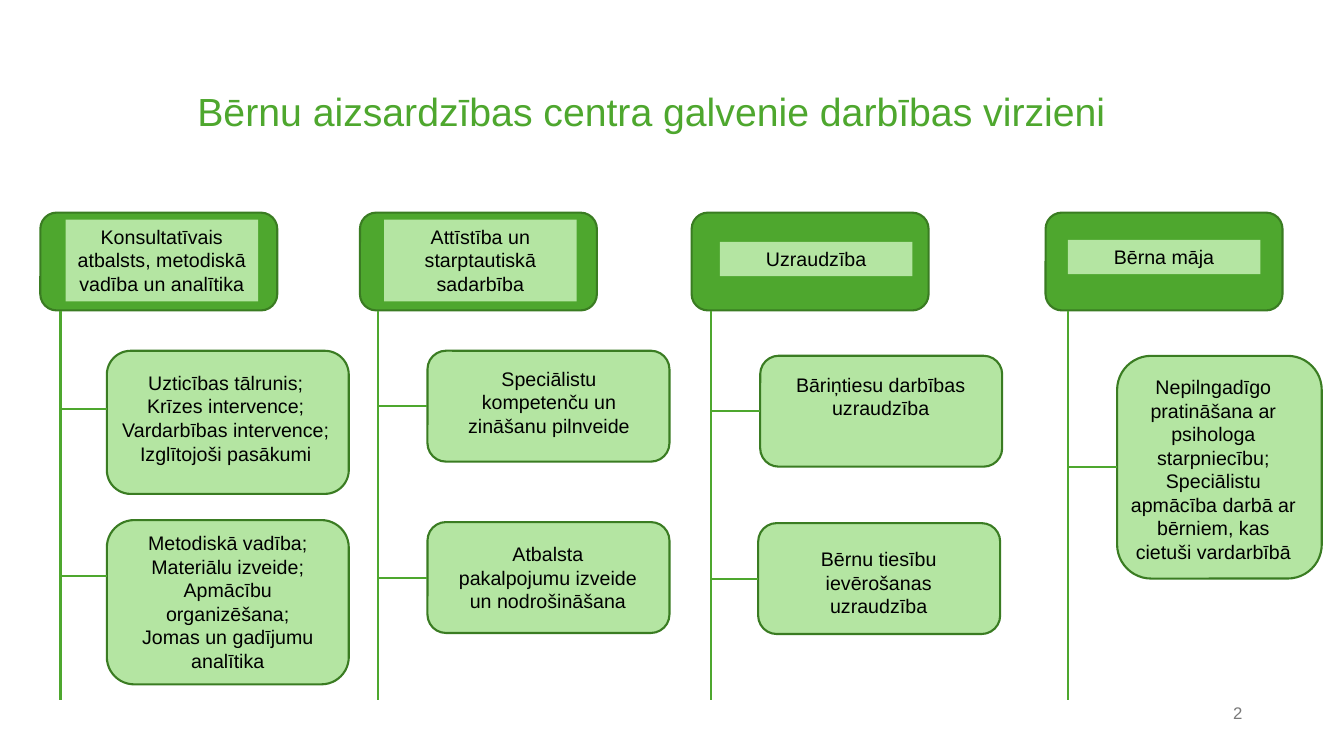
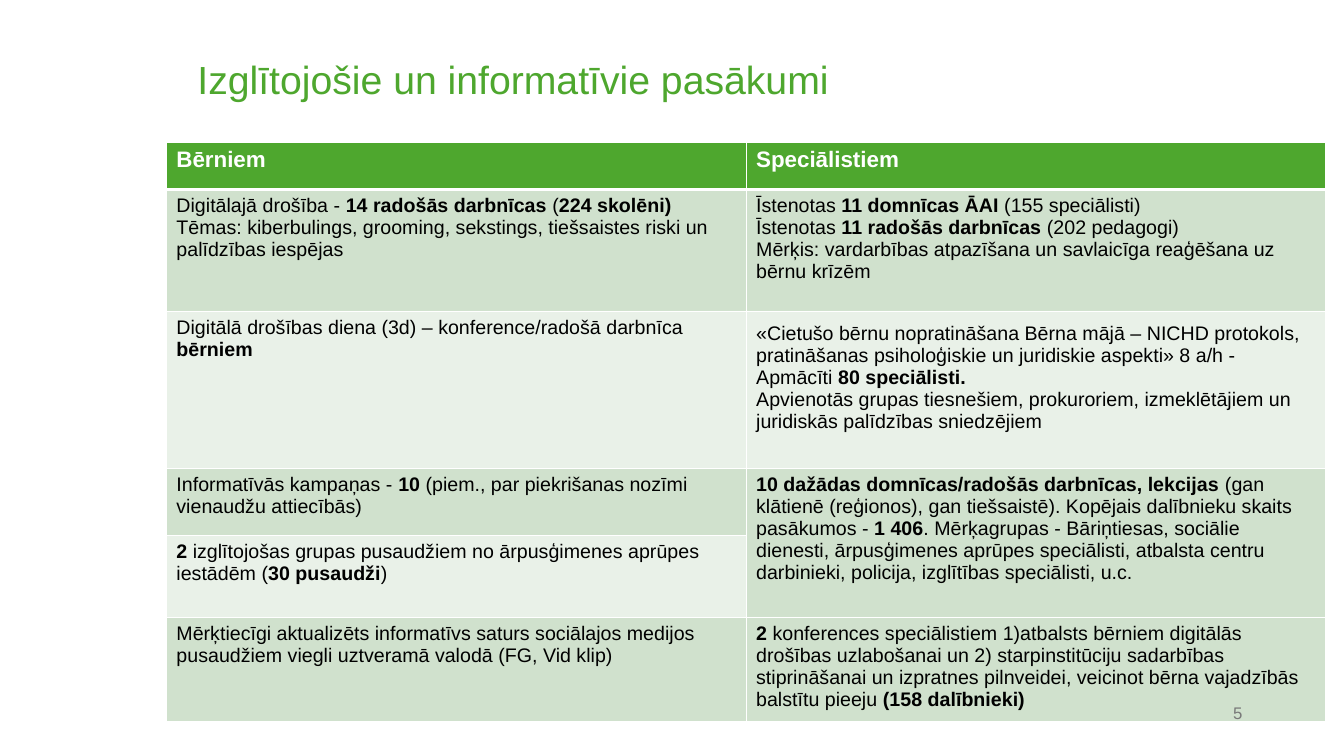
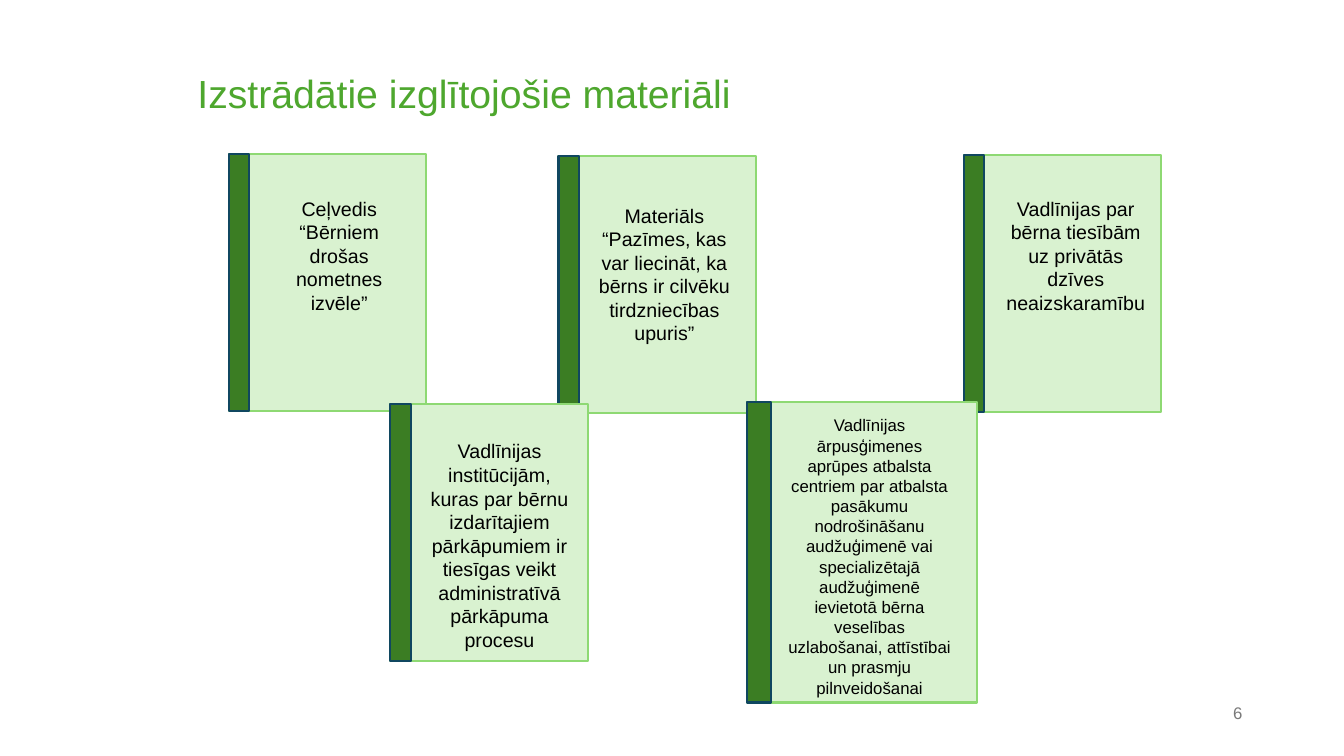
import pptx
import pptx.dml.color
import pptx.enum.shapes
import pptx.enum.text
import pptx.oxml
import pptx.oxml.ns
import pptx.util

Inches = pptx.util.Inches
SHAPE = pptx.enum.shapes.MSO_SHAPE
ALIGN = pptx.enum.text.PP_ALIGN
ANCHOR = pptx.enum.text.MSO_ANCHOR

FONT = "Arial"
GREEN = "4EA72E"
DARK_GREEN = "3A7C22"
LIGHT_GREEN = "B4E5A2"
BOOK_FILL = "D9F2D0"
BOOK_LINE = "8ED973"
SPINE_FILL = "3B7D23"
SPINE_LINE = "104760"
BAND_DARK = "D0E1CD"
BAND_LIGHT = "E9F1E8"
GREY = "797979"
BLACK = "000000"
WHITE = "FFFFFF"

HEADER_TOP, HEADER_HEIGHT = 2.11, 0.97
TRUNK_TOP, TRUNK_BOTTOM = 3.09, 6.94

DIRECTIONS = [
    {
        "header": 0.4, "trunk": 0.6,
        "label": (0.65, 2.18, 1.91, 0.81, "Konsultatīvais atbalsts, metodiskā vadība un analītika"),
        "cards": [
            ((1.06, 3.48, 2.4, 1.42), (1.11, 3.63, 2.26, 1.04), 4.06,
             "Uzticības tālrunis; Krīzes intervence; Vardarbības intervence; Izglītojoši pasākumi"),
            ((1.06, 5.16, 2.4, 1.63), (1.13, 5.22, 2.26, 1.51), 5.71,
             "Metodiskā vadība;\nMateriālu izveide;\nApmācību organizēšana;\nJomas un gadījumu analītika"),
        ],
    },
    {
        "header": 3.57, "trunk": 3.75,
        "label": (3.81, 2.18, 1.91, 0.81, "Attīstība un starptautiskā sadarbība"),
        "cards": [
            ((4.24, 3.48, 2.4, 1.1), (4.42, 3.59, 2.05, 0.81), None,
             "Speciālistu kompetenču un zināšanu pilnveide"),
            ((4.24, 5.18, 2.4, 1.1), (4.41, 5.33, 2.05, 0.81), None,
             "Atbalsta pakalpojumu izveide un nodrošināšana"),
        ],
    },
    {
        "header": 6.86, "trunk": 7.05,
        "label": (7.14, 2.4, 1.91, 0.34, "Uzraudzība"),
        "cards": [
            ((7.54, 3.53, 2.4, 1.1), (7.71, 3.65, 2.05, 0.57), None,
             "Bāriņtiesu darbības uzraudzība"),
            ((7.52, 5.19, 2.4, 1.1), (7.69, 5.38, 2.05, 0.81), None,
             "Bērnu tiesību ievērošanas uzraudzība"),
        ],
    },
    {
        "header": 10.37, "trunk": 10.59,
        "label": (10.59, 2.38, 1.91, 0.34, "Bērna māja"),
        "cards": [
            ((11.08, 3.53, 2.03, 2.21), (11.1, 3.67, 1.87, 1.99), None,
             "Nepilngadīgo pratināšana ar psihologa starpniecību;\n"
             "Speciālistu apmācība darbā ar bērniem, kas cietuši vardarbībā"),
        ],
    },
]

EVENT_ROWS = [
    (0.47, GREEN, "**Bērniem**", "**Speciālistiem**"),
    (1.21, BAND_DARK,
     "Digitālajā drošība - **14 radošās darbnīcas** (**224 skolēni)**\n"
     "Tēmas: kiberbulings, grooming, sekstings, tiešsaistes riski un palīdzības iespējas",
     "Īstenotas **11 domnīcas ĀAI** (155 speciālisti)\n"
     "Īstenotas **11 radošās darbnīcas** (202 pedagogi)\n"
     "Mērķis: vardarbības atpazīšana un savlaicīga reaģēšana uz bērnu krīzēm"),
    (1.56, BAND_LIGHT,
     "Digitālā drošības diena (3d) – konference/radošā darbnīca **bērniem**",
     "«Cietušo bērnu nopratināšana Bērna mājā – NICHD protokols, pratināšanas "
     "psiholoģiskie un juridiskie aspekti» 8 a/h - Apmācīti **80 speciālisti.**\n"
     "Apvienotās grupas tiesnešiem, prokuroriem, izmeklētājiem un juridiskās palīdzības sniedzējiem"),
    (0.66, BAND_DARK,
     "Informatīvās kampaņas - **10** (piem., par piekrišanas nozīmi vienaudžu attiecībās)",
     "**10 dažādas domnīcas/radošās darbnīcas, lekcijas** (gan klātienē (reģionos), gan tiešsaistē). "
     "Kopējais dalībnieku skaits pasākumos - **1 406**. Mērķagrupas - Bāriņtiesas, sociālie dienesti, "
     "ārpusģimenes aprūpes speciālisti, atbalsta centru darbinieki, policija, izglītības speciālisti, u.c."),
    (0.82, BAND_LIGHT,
     "**2** izglītojošas grupas pusaudžiem no ārpusģimenes aprūpes iestādēm (**30 pusaudži**)", ""),
    (1.03, BAND_DARK,
     "Mērķtiecīgi aktualizēts informatīvs saturs sociālajos medijos pusaudžiem viegli uztveramā "
     "valodā (FG, Vid klip)",
     "**2** konferences speciālistiem 1)atbalsts bērniem digitālās drošības uzlabošanai un "
     "2) starpinstitūciju sadarbības stiprināšanai un izpratnes pilnveidei, veicinot bērna "
     "vajadzībās balstītu pieeju **(158 dalībnieki)**"),
]

BOOKS = [
    ((2.27, 1.53, 1.96, 2.55), (2.6, 1.9, 1.53, 1.28), 14,
     "Ceļvedis “Bērniem drošas nometnes izvēle”"),
    ((5.54, 1.55, 1.96, 2.55), (5.78, 1.97, 1.62, 1.51), 14,
     "Materiāls “Pazīmes, kas var liecināt, ka bērns ir cilvēku tirdzniecības upuris”"),
    ((9.56, 1.54, 1.96, 2.55), (9.85, 1.9, 1.64, 1.28), 14,
     "Vadlīnijas par bērna tiesībām uz privātās dzīves neaizskaramību"),
    ((3.87, 4.01, 1.96, 2.55), (4.12, 4.31, 1.67, 2.22), 14,
     "Vadlīnijas institūcijām, kuras par bērnu izdarītajiem pārkāpumiem ir tiesīgas veikt "
     "administratīvā pārkāpuma procesu"),
    ((7.41, 3.99, 2.28, 2.98), (7.72, 4.07, 1.81, 2.93), 12,
     "Vadlīnijas ārpusģimenes aprūpes atbalsta centriem par atbalsta pasākumu nodrošināšanu "
     "audžuģimenē vai specializētajā audžuģimenē ievietotā bērna veselības uzlabošanai, "
     "attīstībai un prasmju pilnveidošanai"),
]


def color(value):
    return pptx.dml.color.RGBColor.from_string(value)


def fill_solid(target, value):
    target.fill.solid()
    target.fill.fore_color.rgb = color(value)


def write_text(frame, text, size, font_color, align):
    for index, line in enumerate(text.split("\n")):
        paragraph = frame.add_paragraph() if index else frame.paragraphs[0]
        paragraph.alignment = align
        paragraph.font.name = FONT
        paragraph.font.size = pptx.util.Pt(size)
        paragraph.font.color.rgb = color(font_color)
        for position, part in enumerate(line.split("**")):
            if part:
                run = paragraph.add_run()
                run.text = part
                run.font.bold = position % 2 == 1


def add_text(slide, box, text, size=14, font_color=BLACK, align=ALIGN.CENTER, anchor=ANCHOR.TOP):
    shape = slide.shapes.add_textbox(*map(Inches, box))
    shape.text_frame.word_wrap = True
    shape.text_frame.vertical_anchor = anchor
    write_text(shape.text_frame, text, size, font_color, align)
    return shape


def add_box(shapes, kind, box, fill, line):
    shape = shapes.add_shape(kind, *map(Inches, box))
    shape.shadow.inherit = False
    fill_solid(shape, fill)
    shape.line.color.rgb = color(line)
    shape.line.width = pptx.util.Pt(1.5)
    return shape


def add_line(slide, start, end):
    connector = slide.shapes.add_connector(
        pptx.enum.shapes.MSO_CONNECTOR.STRAIGHT, *map(Inches, (*start, *end)))
    connector.line.color.rgb = color(GREEN)
    connector.line.width = pptx.util.Pt(1.5)
    properties = connector._element.spPr
    properties.append(pptx.oxml.parse_xml(
        "<a:effectLst %s/>" % pptx.oxml.ns.nsdecls("a")))
    return connector


def add_slide(presentation, title, title_top, number):
    slide = presentation.slides.add_slide(presentation.slide_layouts[6])
    heading = add_text(slide, (1.86, title_top, 10.56, 1.45), title, 28, GREEN,
                       ALIGN.LEFT, ANCHOR.MIDDLE)
    heading.text_frame.paragraphs[0].line_spacing = 0.9
    return slide, lambda: add_text(slide, (9.42, 6.87, 3, 0.4), number, 12, GREY,
                                   ALIGN.RIGHT, ANCHOR.MIDDLE)


def add_card(slide, trunk, box, text_box, branch_y, text):
    left, top, width, height = box
    card = add_box(slide.shapes, SHAPE.ROUNDED_RECTANGLE, box, LIGHT_GREEN, DARK_GREEN)
    middle = top + height / 2
    y = branch_y or middle
    branch = add_line(slide, (trunk, y), (left, y))
    if y == middle:
        branch.end_connect(card, 1)
    add_text(slide, text_box, text)


def add_direction(slide, direction):
    add_box(slide.shapes, SHAPE.ROUNDED_RECTANGLE,
            (direction["header"], HEADER_TOP, 2.35, HEADER_HEIGHT), GREEN, DARK_GREEN)
    *label_box, label_text = direction["label"]
    fill_solid(add_text(slide, label_box, label_text), LIGHT_GREEN)
    trunk = direction["trunk"]
    add_line(slide, (trunk, TRUNK_TOP), (trunk, TRUNK_BOTTOM))
    for card in direction["cards"]:
        add_card(slide, trunk, *card)


def set_borders(cell, top, bottom):
    properties = cell._tc.get_or_add_tcPr()
    for side, width in (("L", 1), ("R", 1), ("T", top), ("B", bottom)):
        properties.append(pptx.oxml.parse_xml(
            '<a:ln%s %s w="%d"><a:solidFill><a:srgbClr val="%s"/></a:solidFill></a:ln%s>'
            % (side, pptx.oxml.ns.nsdecls("a"), pptx.util.Pt(width), WHITE, side)))


def add_events_table(slide):
    table = slide.shapes.add_table(
        len(EVENT_ROWS), 2, *map(Inches, (1.65, 1.41, 11.5, 5.75))).table
    table.horz_banding = False
    for column in table.columns:
        column.width = Inches(5.75)
    for row, (height, fill, *texts) in enumerate(EVENT_ROWS):
        table.rows[row].height = Inches(height)
        size, font_color = (14, BLACK) if row else (16, WHITE)
        for column, text in enumerate(texts):
            cell = table.cell(row, column)
            set_borders(cell, 3 if row == 1 else 1, 1 if row else 3)
            fill_solid(cell, fill)
            write_text(cell.text_frame, text, size, font_color, ALIGN.LEFT)
    table.cell(3, 1).merge(table.cell(4, 1))
    protocol_cell = table.cell(2, 1)
    protocol_cell.margin_top = Inches(0.11)
    protocol_cell.margin_right = Inches(0.15)


def add_book(slide, box):
    left, top, width, height = box
    book = slide.shapes.add_group_shape()
    add_box(book.shapes, SHAPE.RECTANGLE, box, BOOK_FILL, BOOK_LINE)
    spine = (left, top, width * 0.104, height)
    add_box(book.shapes, SHAPE.RECTANGLE, spine, SPINE_FILL, SPINE_LINE)


def main():
    presentation = pptx.Presentation()
    presentation.slide_width = Inches(13.33)
    presentation.slide_height = Inches(7.5)

    slide, add_number = add_slide(
        presentation, "Bērnu aizsardzības centra galvenie darbības virzieni", 0.4, "2")
    for direction in DIRECTIONS:
        add_direction(slide, direction)
    add_number()

    slide, add_number = add_slide(
        presentation, "Izglītojošie un informatīvie pasākumi", 0.09, "5")
    add_events_table(slide)
    add_number()

    slide, add_number = add_slide(
        presentation, "Izstrādātie izglītojošie materiāli", 0.23, "6")
    for box, text_box, size, text in BOOKS:
        add_book(slide, box)
        add_text(slide, text_box, text, size)
    add_number()

    presentation.save("out.pptx")


if __name__ == "__main__":
    main()
